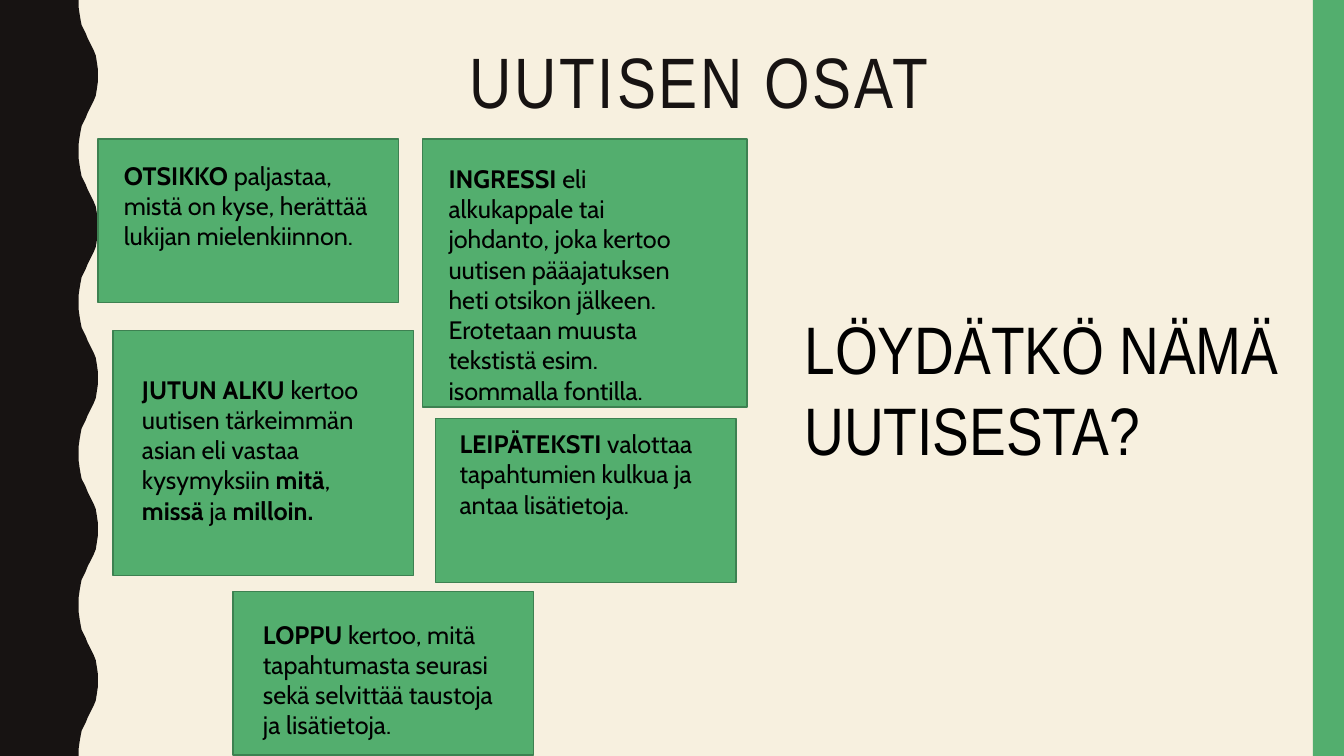
from dataclasses import dataclass, field

from pptx import Presentation, util as u
from pptx.dml import color
from pptx.enum import shapes, text

# Grid: 1333 columns by 750 rows of square cells
COLUMNS, ROWS = 1333, 750
CELL = u.Inches(0.01)

COLOURS = {"cream": "F7F0DF", "ink": "171312", "green": "53AE6E",
           "edge": "3D8151", "black": "000000"}

BODY = {"name": "Cabin", "size": u.Pt(18)}
HEADLINE = {"name": "Arial Narrow", "size": u.Pt(51)}
QUESTION = {"name": "Arial Narrow", "size": u.Pt(48)}

# Half a wave of the left border: (column, row) from trough to crest
WAVE_COUNT, WAVE_ROWS = 5, 150
HALF_WAVE = [(78, 0), (78, 7), (79, 14), (80, 20), (81, 25), (83, 29),
             (85, 33), (87, 38), (89, 42), (91, 46), (93, 50), (95, 55),
             (96, 61), (97, 68), (97, 75)]


@dataclass
class Area:
    column: int
    row: int
    columns: int
    rows: int

    def lengths(self) -> list[int]:
        return [n * CELL for n in (self.column, self.row, self.columns, self.rows)]


@dataclass
class Caption:
    area: Area
    wording: str  # "|" switches between bold and regular
    font: dict = field(default_factory=lambda: BODY)
    colour: str = "black"
    starts_bold: bool = True
    paragraph: dict = field(default_factory=dict)
    fit: text.MSO_AUTO_SIZE = text.MSO_AUTO_SIZE.SHAPE_TO_FIT_TEXT
    spacing: int = 0  # hundredths of a point


@dataclass
class NewsPart:
    card: Area
    caption: Caption


def rgb(name: str) -> color.RGBColor:
    return color.RGBColor.from_string(COLOURS[name])


def apply(target, values: dict) -> None:
    for attribute, value in values.items():
        setattr(target, attribute, value)


def paint(shape, fill: str, edge: str = "") -> None:
    shape.shadow.inherit = False
    shape.fill.solid()
    shape.fill.fore_color.rgb = rgb(fill)
    if edge:
        shape.line.color.rgb = rgb(edge)
        shape.line.width = u.Pt(1)
    else:
        shape.line.fill.background()


def draw_block(slide, area: Area, edge: str = "") -> None:
    block = slide.shapes.add_shape(shapes.MSO_SHAPE.RECTANGLE, *area.lengths())
    paint(block, "green", edge)


def draw_wavy_border(slide) -> None:
    falling = [(column, WAVE_ROWS - row) for column, row in HALF_WAVE[-2::-1]]
    edge = [(column, row + wave * WAVE_ROWS)
            for wave in range(WAVE_COUNT) for column, row in HALF_WAVE + falling]
    builder = slide.shapes.build_freeform(0, 0, scale=CELL)
    builder.add_line_segments(edge + [(0, ROWS)], close=True)
    paint(builder.convert_to_shape(), "ink")


def write(slide, caption: Caption) -> None:
    frame = slide.shapes.add_textbox(*caption.area.lengths()).text_frame
    apply(frame, {"word_wrap": True, "auto_size": caption.fit,
                  "vertical_anchor": text.MSO_ANCHOR.TOP})
    paragraph = frame.paragraphs[0]
    apply(paragraph, caption.paragraph)
    bold = caption.starts_bold
    for piece in caption.wording.split("|"):
        run = paragraph.add_run()
        run.text = piece
        apply(run.font, {**caption.font, "bold": bold})
        run.font.color.rgb = rgb(caption.colour)
        if caption.spacing:
            run.font._element.set("spc", str(caption.spacing))
        bold = not bold


TITLE = Caption(
    Area(137, 42, 1113, 163), "UUTISEN OSAT", HEADLINE, "ink", False,
    {"alignment": text.PP_ALIGN.CENTER, "line_spacing": 0.9},
    text.MSO_AUTO_SIZE.NONE, 200)

PROMPT = Caption(Area(788, 300, 497, 172), "LÖYDÄTKÖ NÄMÄ UUTISESTA?",
                 QUESTION, starts_bold=False)

NEWS_PARTS = [
    NewsPart(Area(97, 138, 298, 162), Caption(
        Area(113, 154, 267, 101),
        "OTSIKKO| paljastaa, mistä on kyse, herättää lukijan mielenkiinnon.")),
    NewsPart(Area(112, 328, 298, 243), Caption(
        Area(131, 366, 272, 162),
        "JUTUN ALKU |kertoo uutisen tärkeimmän asian eli vastaa kysymyksiin "
        "|mitä|, |missä| ja |milloin.")),
    NewsPart(Area(432, 415, 298, 163), Caption(
        Area(446, 420, 271, 131),
        "LEIPÄTEKSTI| valottaa tapahtumien kulkua ja antaa lisätietoja.")),
    NewsPart(Area(231, 587, 298, 162), Caption(
        Area(251, 609, 258, 131),
        "LOPPU |kertoo, mitä tapahtumasta seurasi sekä selvittää taustoja "
        "ja lisätietoja.")),
    NewsPart(Area(419, 138, 322, 266), Caption(
        Area(435, 157, 268, 252),
        "INGRESSI |eli alkukappale tai johdanto, joka kertoo uutisen "
        "pääajatuksen heti otsikon jälkeen. Erotetaan muusta tekstistä esim. "
        "isommalla fontilla.")),
]


def main() -> None:
    deck = Presentation()
    apply(deck, {"slide_width": COLUMNS * CELL, "slide_height": ROWS * CELL})
    slide = deck.slides.add_slide(deck.slide_layouts[6])

    # Background and side borders
    slide.background.fill.solid()
    slide.background.fill.fore_color.rgb = rgb("cream")
    draw_wavy_border(slide)
    draw_block(slide, Area(1302, 0, 31, ROWS))

    # Title, parts of a news story, question to the class
    write(slide, TITLE)
    for part in NEWS_PARTS:
        draw_block(slide, part.card, "edge")
        write(slide, part.caption)
    write(slide, PROMPT)

    deck.save("out.pptx")


if __name__ == "__main__":
    main()
